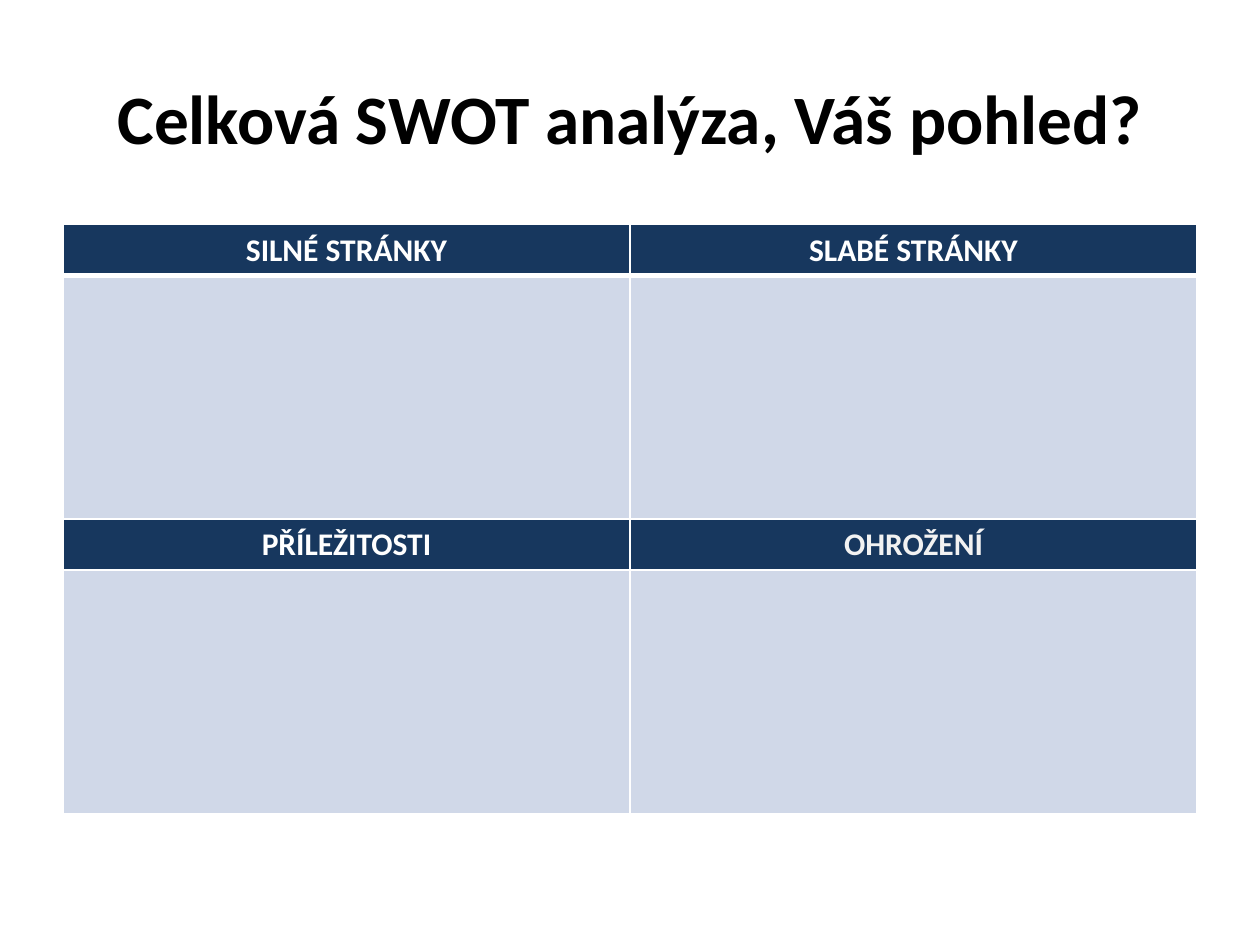
"""Build a SWOT analysis slide with a titled four-quadrant table."""
import lxml.etree
import pptx
import pptx.dml.color
import pptx.enum.text
import pptx.oxml
import pptx.oxml.ns
import pptx.util

Pt = pptx.util.Pt
RGBColor = pptx.dml.color.RGBColor
CENTER = pptx.enum.text.PP_ALIGN.CENTER
MIDDLE = pptx.enum.text.MSO_ANCHOR.MIDDLE

BLACK = RGBColor(0x00, 0x00, 0x00)
WHITE = RGBColor(0xFF, 0xFF, 0xFF)
OFF_WHITE = RGBColor(0xF2, 0xF2, 0xF2)
NAVY = RGBColor(0x17, 0x37, 0x5E)
PALE_BLUE = RGBColor(0xD0, 0xD8, 0xE8)

LEFT, WIDTH = 36, 648
HEADING_HEIGHT, BODY_HEIGHT = 29.2, 139
ROWS = [
    [("SILNÉ STRÁNKY", WHITE), ("SLABÉ STRÁNKY", WHITE)],
    [("", BLACK), ("", BLACK)],
    [("PŘÍLEŽITOSTI", WHITE), ("OHROŽENÍ", OFF_WHITE)],
    [("", BLACK), ("", BLACK)],
]


def write_text(paragraph, text, size, color):
    paragraph.alignment = CENTER
    run = paragraph.add_run()
    run.text = text
    font_format = {"name": "Calibri", "size": Pt(size), "bold": True}
    for attribute, value in font_format.items():
        setattr(run.font, attribute, value)
    run.font.color.rgb = color


def set_borders(cell, widths):
    properties = cell._tc.get_or_add_tcPr()
    for position, (side, width) in enumerate(widths.items()):
        border = pptx.oxml.parse_xml(
            f'<a:ln{side} {pptx.oxml.ns.nsdecls("a")} w="{Pt(width)}">'
            f'<a:solidFill><a:srgbClr val="{WHITE}"/></a:solidFill></a:ln{side}>'
        )
        properties.insert(position, border)


presentation = pptx.Presentation()
presentation.slide_width = Pt(720)
presentation.slide_height = Pt(540)
slide = presentation.slides.add_slide(presentation.slide_layouts[6])

title = slide.shapes.add_textbox(Pt(LEFT), Pt(21.6), Pt(WIDTH), Pt(90))
for attribute, value in {"word_wrap": True, "vertical_anchor": MIDDLE}.items():
    setattr(title.text_frame, attribute, value)
write_text(title.text_frame.paragraphs[0], "Celková SWOT analýza, Váš pohled?", 39.6, BLACK)

table_height = 2 * (HEADING_HEIGHT + BODY_HEIGHT)
table = slide.shapes.add_table(
    len(ROWS), 2, Pt(LEFT), Pt(128.4), Pt(WIDTH), Pt(table_height)
).table
table.horz_banding = False

for row_index, row in enumerate(ROWS):
    is_heading = row_index % 2 == 0
    table.rows[row_index].height = Pt(HEADING_HEIGHT if is_heading else BODY_HEIGHT)
    top_width = 3 if row_index == 1 else 1
    bottom_width = 3 if row_index == 0 else 1
    for column_index, (text, color) in enumerate(row):
        cell = table.cell(row_index, column_index)
        cell.fill.solid()
        cell.fill.fore_color.rgb = NAVY if is_heading else PALE_BLUE
        set_borders(cell, {"L": 1, "R": 1, "T": top_width, "B": bottom_width})
        if text:
            write_text(cell.text_frame.paragraphs[0], text, 18, color)

presentation.save("out.pptx")
